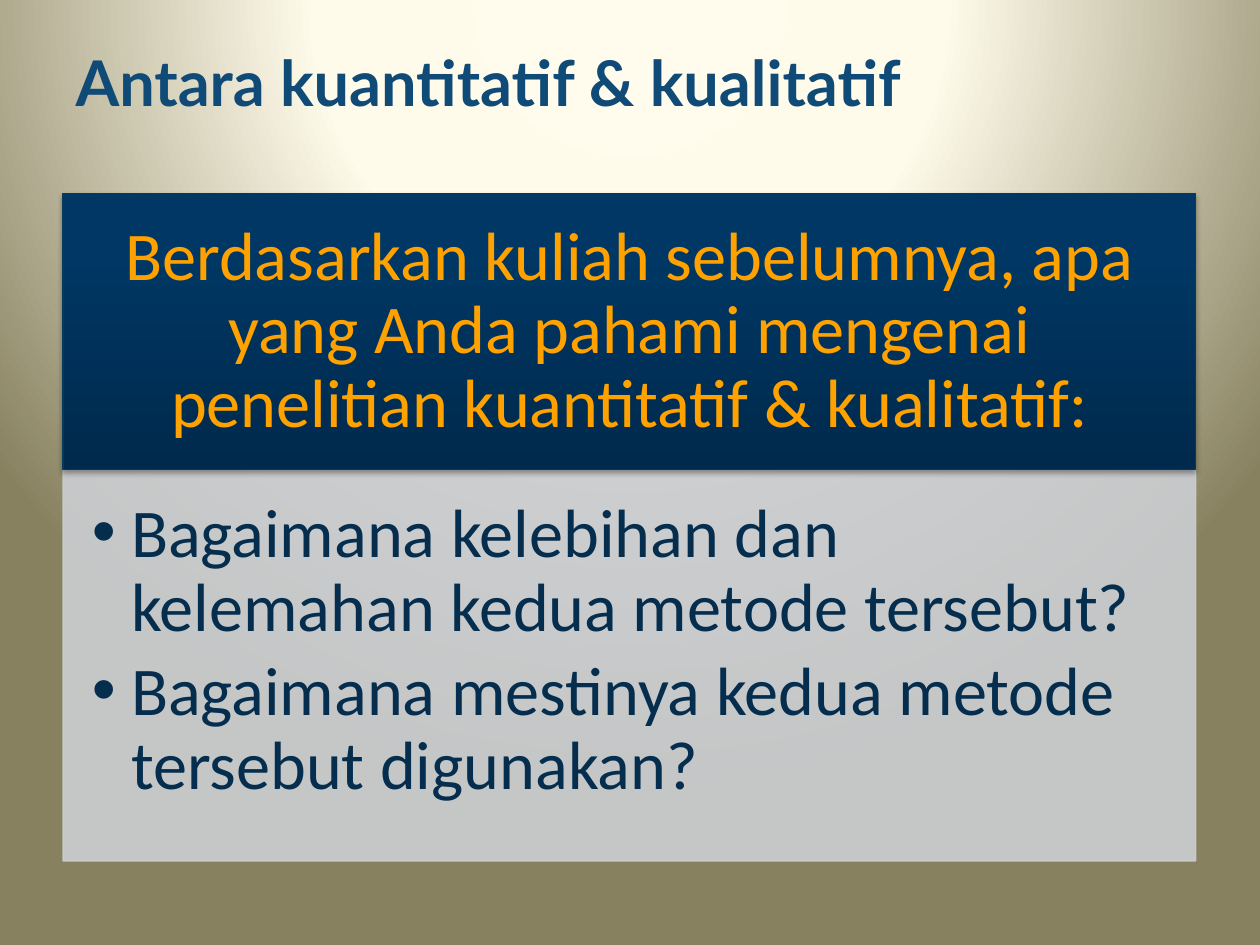
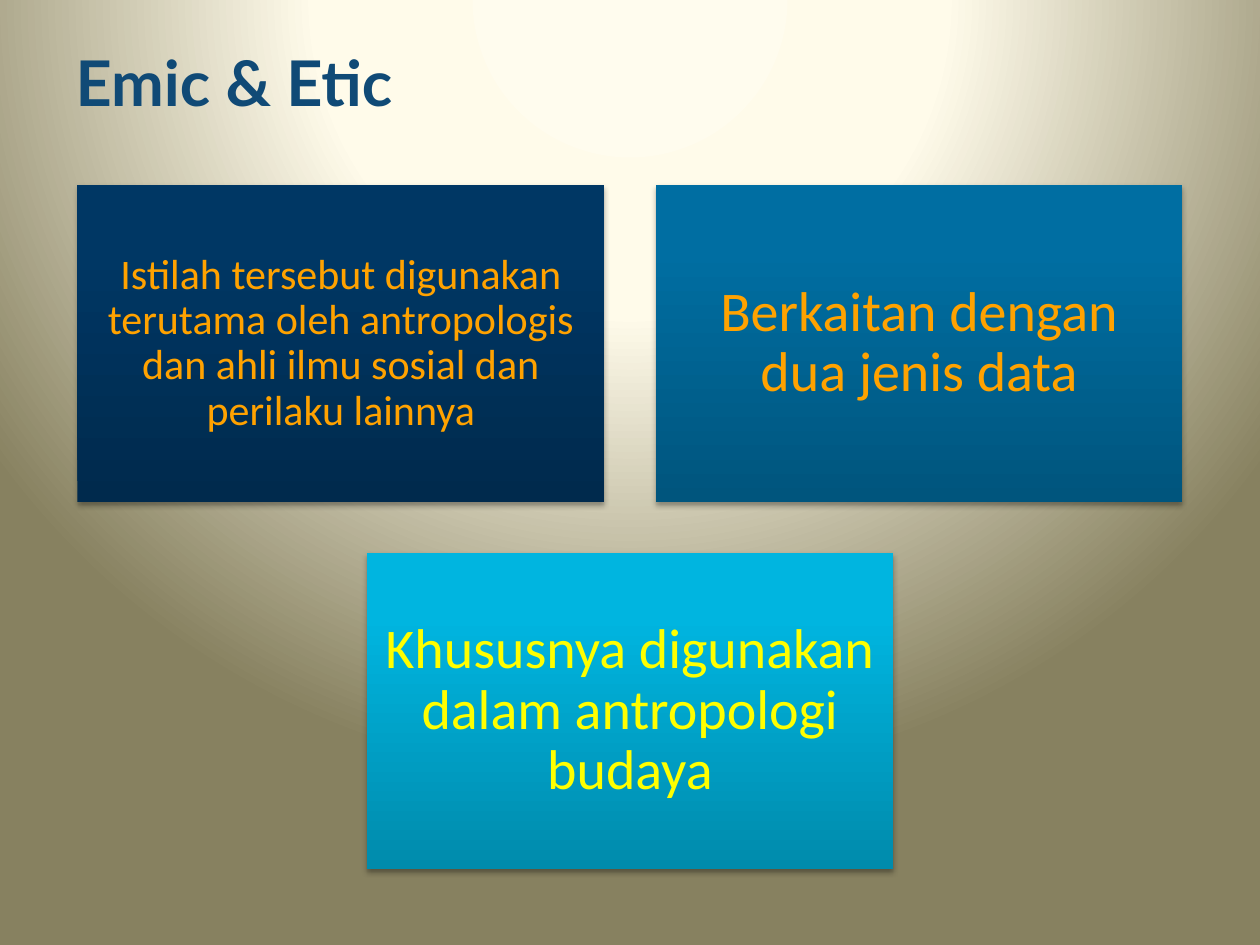
from dataclasses import dataclass

from lxml.etree import SubElement
from pptx import Presentation
from pptx.dml.color import RGBColor
from pptx.dml.fill import FillFormat
from pptx.enum.shapes import MSO_SHAPE
from pptx.enum.text import MSO_ANCHOR, MSO_AUTO_SIZE, PP_ALIGN
from pptx.oxml import parse_xml
from pptx.oxml.ns import nsdecls, qn
from pptx.shapes.autoshape import Shape
from pptx.slide import Slide, SlideMaster
from pptx.text.text import TextFrame
from pptx.util import Inches, Pt

Stops = tuple[tuple[int, str], ...]


@dataclass(frozen=True)
class Theme:
    width: int = Inches(10)
    height: int = Inches(7.5)
    title_font: str = "Lato"
    text_font: str = "Calibri"
    title_size: int = 36
    large_size: int = 39
    card_size: int = 32
    small_size: int = 24
    title_color: str = "104A76"
    list_color: str = "052D4E"
    orange: str = "FFA200"
    yellow: str = "FFFF00"
    panel_color: str = "CCCED2"
    panel_opacity: int = 90
    border_color: str = "09385E"
    border_width: float = 0.75
    line_spacing: float = 0.9
    backdrop: Stops = ((0, "FFFCEE"), (40, "FFFBEA"), (100, "878160"))
    navy: Stops = ((0, "002A4D"), (80, "003764"), (100, "003764"))
    blue: Stops = ((0, "00557D"), (80, "006EA2"), (100, "006FA3"))
    cyan: Stops = ((0, "008BAC"), (80, "00B5E0"), (100, "00B6E1"))


THEME = Theme()


@dataclass(frozen=True)
class Area:
    left: float
    top: float
    width: float
    height: float

    def place(self, shape: Shape) -> None:
        shape.left, shape.top, shape.width, shape.height = self.emu()

    def emu(self) -> tuple[int, int, int, int]:
        return (
            round(self.left * THEME.width),
            round(self.top * THEME.height),
            round(self.width * THEME.width),
            round(self.height * THEME.height),
        )


@dataclass(frozen=True)
class Card:
    text: str
    stops: Stops
    color: str = THEME.orange
    size: int = THEME.card_size
    inset: float = 0.13


TITLE_AREA = Area(0.05, 0.008, 0.9, 0.156)
HEADER_AREA = Area(0.05, 0.205, 0.899, 0.292)
LIST_AREA = Area(0.05, HEADER_AREA.top + HEADER_AREA.height, 0.899, 0.414)

CARD_WIDTH, CARD_HEIGHT = 0.418, 0.335
COLUMN_STEP, ROW_STEP = 0.459, 0.389
CARDS_TOP = 0.196

HEADER = Card(
    "Berdasarkan kuliah sebelumnya, apa yang Anda pahami mengenai "
    "penelitian kuantitatif & kualitatif:",
    THEME.navy,
    size=THEME.large_size,
    inset=0.3,
)
QUESTIONS = (
    "Bagaimana kelebihan dan kelemahan kedua metode tersebut?",
    "Bagaimana mestinya kedua metode tersebut digunakan?",
)
CARD_ROWS = (
    (
        Card(
            "Istilah tersebut digunakan terutama oleh antropologis "
            "dan ahli ilmu sosial dan perilaku lainnya",
            THEME.navy,
            size=THEME.small_size,
            inset=0.1,
        ),
        Card("Berkaitan dengan dua jenis data", THEME.blue),
    ),
    (Card("Khususnya digunakan dalam antropologi budaya", THEME.cyan, THEME.yellow),),
)


def gradient(stops: Stops, direction: str):
    marks = "".join(
        f'<a:gs pos="{position * 1000}"><a:srgbClr val="{color}"/></a:gs>'
        for position, color in stops
    )
    return parse_xml(
        f'<a:gradFill {nsdecls("a")} rotWithShape="1">'
        f"<a:gsLst>{marks}</a:gsLst>{direction}</a:gradFill>"
    )


def paint_backdrop(master: SlideMaster) -> None:
    master.background.fill.solid()
    solid = master.element.find(".//" + qn("p:bgPr")).find(qn("a:solidFill"))
    glow = (
        '<a:path path="circle">'
        '<a:fillToRect l="50000" t="-80000" r="50000" b="180000"/></a:path>'
    )
    solid.getparent().replace(solid, gradient(THEME.backdrop, glow))


def solid_fill(fill: FillFormat, color: str) -> None:
    fill.solid()
    fill.fore_color.rgb = RGBColor.from_string(color)


def add_opacity(color_element, percent: int) -> None:
    SubElement(color_element, qn("a:alpha")).set("val", str(percent * 1000))


def add_shadow(shape: Shape) -> None:
    shape.shadow.inherit = False
    effects = shape.element.spPr.find(qn("a:effectLst"))
    shadow = SubElement(effects, qn("a:outerShdw"))
    settings = {"blurRad": Pt(3.1), "dist": Pt(1.8), "dir": 90 * 60000, "rotWithShape": 0}
    for name, value in settings.items():
        shadow.set(name, str(int(value)))
    color = SubElement(shadow, qn("a:srgbClr"))
    color.set("val", "000000")
    add_opacity(color, 35)


def set_frame(
    frame: TextFrame,
    anchor: MSO_ANCHOR,
    insets: tuple[float, float, float, float] = (0.1, 0.05, 0.1, 0.05),
) -> None:
    frame.word_wrap = True
    frame.auto_size = MSO_AUTO_SIZE.NONE
    frame.vertical_anchor = anchor
    frame.margin_left, frame.margin_top, frame.margin_right, frame.margin_bottom = map(
        Inches, insets
    )


def set_font(paragraph, name: str, size: int, color: str, bold: bool = False) -> None:
    font = paragraph.font
    font.name, font.size, font.bold = name, Pt(size), bold
    font.color.rgb = RGBColor.from_string(color)


def add_page(deck: Presentation, layout_name: str, title: str) -> Slide:
    page = deck.slides.add_slide(deck.slide_layouts.get_by_name(layout_name))
    box = page.shapes.title
    TITLE_AREA.place(box)
    set_frame(box.text_frame, MSO_ANCHOR.MIDDLE)
    box.text_frame.text = title
    para = box.text_frame.paragraphs[0]
    para.alignment = PP_ALIGN.LEFT
    set_font(para, THEME.title_font, THEME.title_size, THEME.title_color, True)
    return page


def draw_card(page: Slide, card: Card, area: Area) -> Shape:
    box = page.shapes.add_shape(MSO_SHAPE.RECTANGLE, *area.emu())
    box.fill.background()
    properties = box.element.spPr
    upward = '<a:lin ang="16200000" scaled="0"/>'
    properties.replace(properties.find(qn("a:noFill")), gradient(card.stops, upward))
    box.line.fill.background()
    add_shadow(box)
    set_frame(box.text_frame, MSO_ANCHOR.MIDDLE, (card.inset,) * 4)
    box.text_frame.text = card.text
    para = box.text_frame.paragraphs[0]
    para.alignment = PP_ALIGN.CENTER
    para.line_spacing = THEME.line_spacing
    set_font(para, THEME.text_font, card.size, card.color)
    return box


def draw_list(box: Shape, items: tuple[str, ...], area: Area) -> None:
    area.place(box)
    solid_fill(box.fill, THEME.panel_color)
    solid_fill(box.line.fill, THEME.panel_color)
    box.line.width = Pt(THEME.border_width)
    for color in box.element.spPr.iter(qn("a:srgbClr")):
        add_opacity(color, THEME.panel_opacity)
    frame = box.text_frame
    set_frame(frame, MSO_ANCHOR.TOP, (0.23, 0.23, 0.3, 0.34))
    frame.text = "\n".join(items)
    for para in frame.paragraphs:
        properties = para._p.get_or_add_pPr()
        properties.set("marL", str(Inches(0.31)))
        properties.set("indent", str(-Inches(0.31)))
        SubElement(properties, qn("a:buChar")).set("char", "•")
        para.line_spacing = THEME.line_spacing
        para.space_before = Pt(0)
        para.space_after = Pt(6)
        set_font(para, THEME.text_font, THEME.large_size, THEME.list_color)


def build_comparison(deck: Presentation) -> None:
    page = add_page(deck, "Title and Content", "Antara kuantitatif & kualitatif")
    header = draw_card(page, HEADER, HEADER_AREA)
    solid_fill(header.line.fill, THEME.border_color)
    header.line.width = Pt(THEME.border_width)
    draw_list(page.placeholders[1], QUESTIONS, LIST_AREA)


def build_emic_etic(deck: Presentation) -> None:
    page = add_page(deck, "Title Only", "Emic & Etic")
    for row, cards in enumerate(CARD_ROWS):
        row_width = CARD_WIDTH + COLUMN_STEP * (len(cards) - 1)
        left = (1 - row_width) / 2
        top = CARDS_TOP + row * ROW_STEP
        for column, card in enumerate(cards):
            area = Area(left + column * COLUMN_STEP, top, CARD_WIDTH, CARD_HEIGHT)
            draw_card(page, card, area)


def main() -> None:
    deck = Presentation()
    deck.slide_width, deck.slide_height = THEME.width, THEME.height
    paint_backdrop(deck.slide_master)
    build_comparison(deck)
    build_emic_etic(deck)
    deck.save("out.pptx")


if __name__ == "__main__":
    main()
